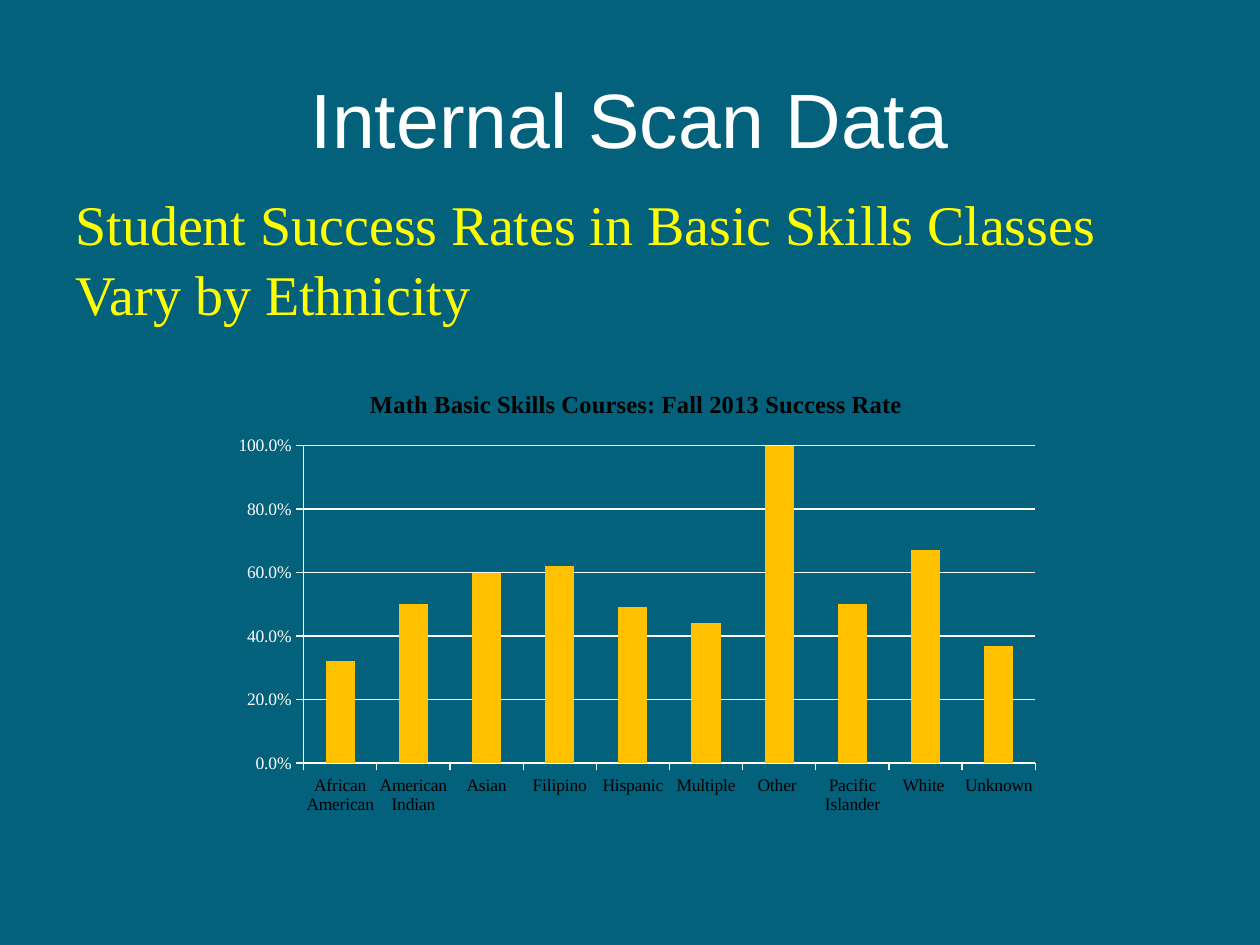
from lxml import etree
from pptx import Presentation
from pptx.chart import data
from pptx.dml import color
from pptx.enum import chart as kinds, text
from pptx.oxml import ns
from pptx import util as u

WIDTH, HEIGHT = u.Inches(10), u.Inches(7.5)
COLORS = {"page": "04617B", "white": "FFFFFF", "heading": "FFFF00",
          "black": "000000", "bar": "FFC000"}
SERIF = "Times New Roman"
RATES = {"African American": 0.32, "American Indian": 0.5, "Asian": 0.6,
         "Filipino": 0.62, "Hispanic": 0.49, "Multiple": 0.44, "Other ": 1,
         "Pacific Islander": 0.5, "White ": 0.67, "Unknown": 0.37}


def rgb(name):
    """Return the named colour."""
    return color.RGBColor.from_string(COLORS[name])


def assign(target, values):
    """Set each attribute in values on the target."""
    for name, value in values.items():
        setattr(target, name, value)


def style_font(font, size, tint, name=SERIF, bold=False):
    """Set size, colour, typeface and weight of a font."""
    assign(font, {"size": u.Pt(size), "name": name, "bold": bold})
    font.color.rgb = rgb(tint)


def share(left, top, width, height):
    """Turn shares of the slide's size into lengths."""
    return [round(part * side) for part, side in
            zip((left, top, width, height), (WIDTH, HEIGHT) * 2)]


def add_text(page, place, words, frame_format, para_format, font_format):
    """Add a wrapped text box holding one paragraph."""
    frame = page.shapes.add_textbox(*share(*place)).text_frame
    assign(frame, {"word_wrap": True, **frame_format})
    para = frame.paragraphs[0]
    assign(para, para_format)
    span = para.add_run()
    span.text = words
    style_font(span.font, **font_format)


def style_axis(axis, tint, values):
    """Format the line, ticks and labels of an axis."""
    assign(axis, {"major_tick_mark": kinds.XL_TICK_MARK.OUTSIDE,
                  "minor_tick_mark": kinds.XL_TICK_MARK.NONE, **values})
    axis.format.line.color.rgb = rgb("white")
    axis.format.line.width = u.Pt(0.75)
    style_font(axis.tick_labels.font, 10, tint)


def place_plot(chart, **shares):
    """Fix the inner plot area as shares of the chart."""
    area = chart.element.find(".//" + ns.qn("c:plotArea"))
    for old in area.findall(ns.qn("c:layout")):
        area.remove(old)
    layout = etree.Element(ns.qn("c:layout"))
    area.insert(0, layout)
    manual = etree.SubElement(layout, ns.qn("c:manualLayout"))
    settings = {"layoutTarget": "inner", "xMode": "edge", "yMode": "edge", **shares}
    for name, value in settings.items():
        etree.SubElement(manual, ns.qn("c:" + name)).set("val", str(value))


def add_rate_chart(page, place):
    """Add the column chart of success rates."""
    rates = data.CategoryChartData(number_format="0.0%")
    rates.categories = list(RATES)
    rates.add_series("Series 1", list(RATES.values()))
    chart = page.shapes.add_chart(
        kinds.XL_CHART_TYPE.COLUMN_CLUSTERED, *share(*place), rates).chart
    style_font(chart.font, 10, "white")
    assign(chart, {"has_legend": False, "has_title": True})
    title = chart.chart_title
    title.include_in_layout = False
    span = title.text_frame.paragraphs[0].add_run()
    span.text = "Math Basic Skills Courses: Fall 2013 Success Rate"
    style_font(span.font, 14, "black", bold=True)

    style_axis(chart.category_axis, "black", {"has_major_gridlines": False})
    scale = chart.value_axis
    style_axis(scale, "white", {"minimum_scale": 0, "maximum_scale": 1,
                                "major_unit": 0.2, "has_major_gridlines": True})
    assign(scale.tick_labels, {"number_format": "0.0%",
                               "number_format_is_linked": False})
    scale.major_gridlines.format.line.color.rgb = rgb("white")
    scale.major_gridlines.format.line.width = u.Pt(0.75)

    plot = chart.plots[0]
    assign(plot, {"gap_width": 150, "vary_by_categories": False})
    fill = plot.series[0].format.fill
    fill.solid()
    fill.fore_color.rgb = rgb("bar")
    place_plot(chart, x=0.1, y=0.17, w=0.88, h=0.7)


def main():
    """Build and save the slide."""
    deck = Presentation()
    assign(deck, {"slide_width": WIDTH, "slide_height": HEIGHT})
    page = deck.slides.add_slide(deck.slide_layouts[6])
    page.background.fill.solid()
    page.background.fill.fore_color.rgb = rgb("page")
    add_text(page, (0.05, 0.04, 0.9, 0.17), "Internal Scan Data",
             {"vertical_anchor": text.MSO_ANCHOR.MIDDLE},
             {"alignment": text.PP_ALIGN.CENTER},
             {"size": 44, "tint": "white", "name": "Arial"})
    add_text(page, (0.05, 0.19, 0.9, 0.7),
             "Student Success Rates in Basic Skills Classes Vary by Ethnicity",
             {"vertical_anchor": text.MSO_ANCHOR.TOP},
             {"alignment": text.PP_ALIGN.LEFT, "line_spacing": 1.05},
             {"size": 32, "tint": "heading"})
    add_rate_chart(page, (0.175, 0.39, 0.66, 0.48))
    deck.save("out.pptx")


if __name__ == "__main__":
    main()
